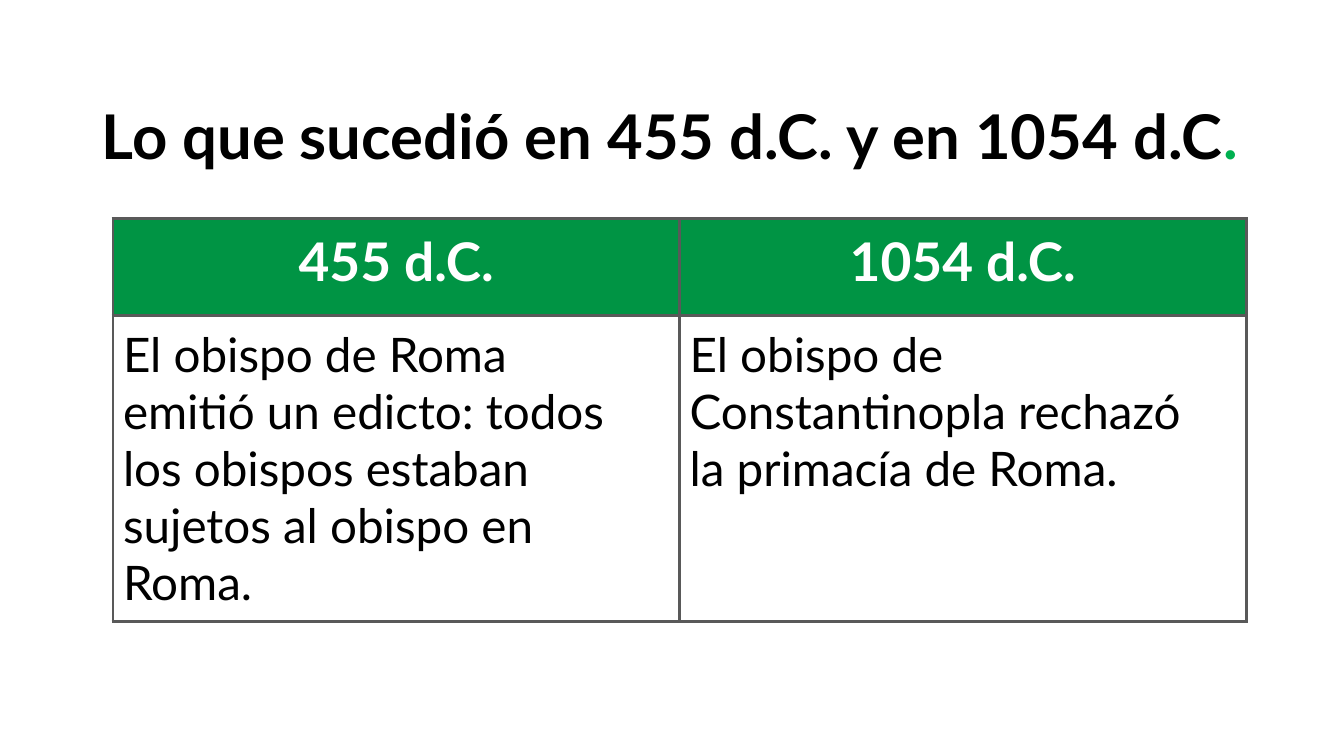
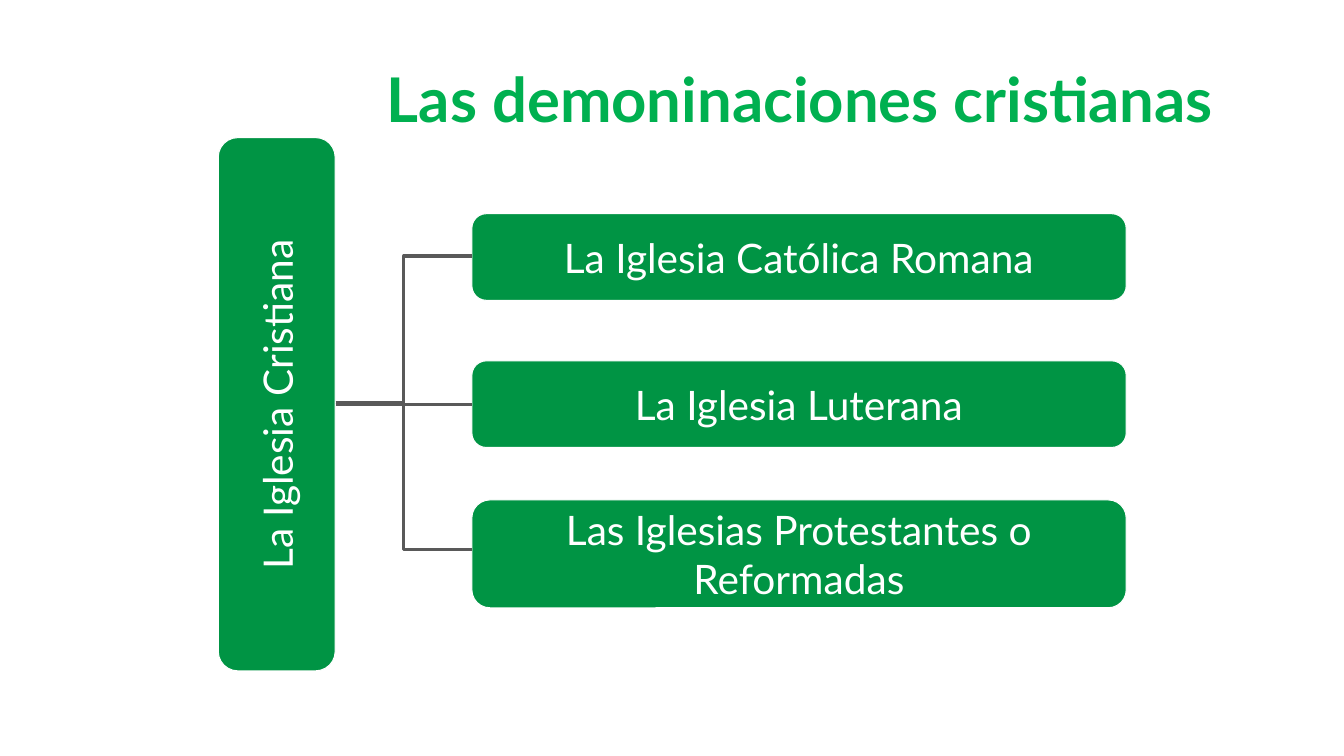
"""Build two slides on church history: a comparison table and a tree of denominations."""
from lxml import etree
from pptx import Presentation
from pptx import util as u
from pptx.dml.color import RGBColor
from pptx.enum import shapes, text
from pptx.oxml.ns import qn

PX = 9144
FONT = "Lato"
GREEN = RGBColor(0x00, 0x94, 0x44)
BRIGHT = RGBColor(0x00, 0xB0, 0x50)
GREY = RGBColor(0x59, 0x59, 0x59)
BLACK = RGBColor(0, 0, 0)
WHITE = RGBColor(0xFF, 0xFF, 0xFF)
LINE = u.Pt(2.25)


def px(*lengths):
    return [u.Emu(n * PX) for n in lengths]


def add_run(p, words, size, color, bold=False):
    r = p.add_run()
    r.text = words
    r.font.name = FONT
    r.font.size = u.Pt(size)
    r.font.bold = bold
    r.font.color.rgb = color


prs = Presentation()
prs.slide_width, prs.slide_height = px(1333, 750)

titles = [
    ((91, 92, 1168, 84), [("Lo que sucedió en 455 d.C. y en 1054 d.C", BLACK), (".", BRIGHT)]),
    ((374, 56, 886, 84), [("Las demoninaciones cristianas", BRIGHT)]),
]
slides = []
for box, parts in titles:
    s = prs.slides.add_slide(prs.slide_layouts[6])
    tf = s.shapes.add_textbox(*px(*box)).text_frame
    tf.word_wrap = True
    for words, color in parts:
        add_run(tf.paragraphs[0], words, 44, color, True)
    slides.append(s)
table_slide, tree_slide = slides

columns = [
    ("455 d.C.", ["El obispo de Roma", "emitió un edicto: todos",
                  "los obispos estaban sujetos al obispo en Roma."]),
    ("1054 d.C.", ["El obispo de Constantinopla rechazó", "la primacía de Roma."]),
]
table = table_slide.shapes.add_table(2, 2, *px(112, 217, 1124, 399)).table
table.first_row = table.horz_banding = False
table.rows[0].height, table.rows[1].height = px(96, 303)
for col, (heading, lines) in enumerate(columns):
    for row, paragraphs in enumerate([[heading], lines]):
        cell = table.cell(row, col)
        cell.margin_left = cell.margin_right = cell.margin_top = cell.margin_bottom = 10 * PX
        if row == 0:
            cell.fill.solid()
            cell.fill.fore_color.rgb = GREEN
        else:
            cell.fill.background()
        tf = cell.text_frame
        for i, words in enumerate(paragraphs):
            p = tf.add_paragraph() if i else tf.paragraphs[0]
            if row == 0:
                p.alignment = text.PP_ALIGN.CENTER
                add_run(p, words, 38, WHITE, True)
            else:
                add_run(p, words, 34, BLACK)
        tcPr = cell._tc.get_or_add_tcPr()
        for i, side in enumerate(["a:lnL", "a:lnR", "a:lnT", "a:lnB"]):
            ln = etree.Element(qn(side), w=str(LINE))
            fill = etree.SubElement(ln, qn("a:solidFill"))
            etree.SubElement(fill, qn("a:srgbClr"), val=str(GREY))
            tcPr.insert(i, ln)

nodes = [
    ("La Iglesia Cristiana", (10, 343, 529, 116), 270),
    ("La Iglesia Católica Romana", (468, 212, 649, 86), 0),
    ("La Iglesia Luterana", (468, 358, 649, 86), 0),
    ("Las Iglesias Protestantes o Reformadas", (468, 496, 649, 107), 0),
]
boxes = []
for words, box, angle in nodes:
    sp = tree_slide.shapes.add_shape(shapes.MSO_SHAPE.ROUNDED_RECTANGLE, *px(*box))
    sp.rotation = angle
    sp.shadow.inherit = False
    sp.fill.solid()
    sp.fill.fore_color.rgb = GREEN
    sp.line.color.rgb = WHITE
    sp.line.width = u.Pt(0.75)
    tf = sp.text_frame
    tf.word_wrap = True
    tf.vertical_anchor = text.MSO_ANCHOR.MIDDLE
    tf.margin_left = tf.margin_right = tf.margin_top = tf.margin_bottom = 13 * PX
    p = tf.paragraphs[0]
    p.alignment = text.PP_ALIGN.CENTER
    add_run(p, words, 29, WHITE)
    boxes.append(sp)

ELBOW, STRAIGHT = shapes.MSO_CONNECTOR.ELBOW, shapes.MSO_CONNECTOR.STRAIGHT
branches = [(ELBOW, 401, 254), (STRAIGHT, 401, 401), (ELBOW, 399, 545)]
for sp, (kind, start, end) in zip(boxes[1:], branches):
    link = tree_slide.shapes.add_connector(kind, *px(333, start, 468, end))
    link.line.color.rgb = GREY
    link.line.width = LINE
    etree.SubElement(link._element.spPr, qn("a:effectLst"))
    if kind == STRAIGHT:
        link.end_connect(sp, 1)

prs.save("out.pptx")
